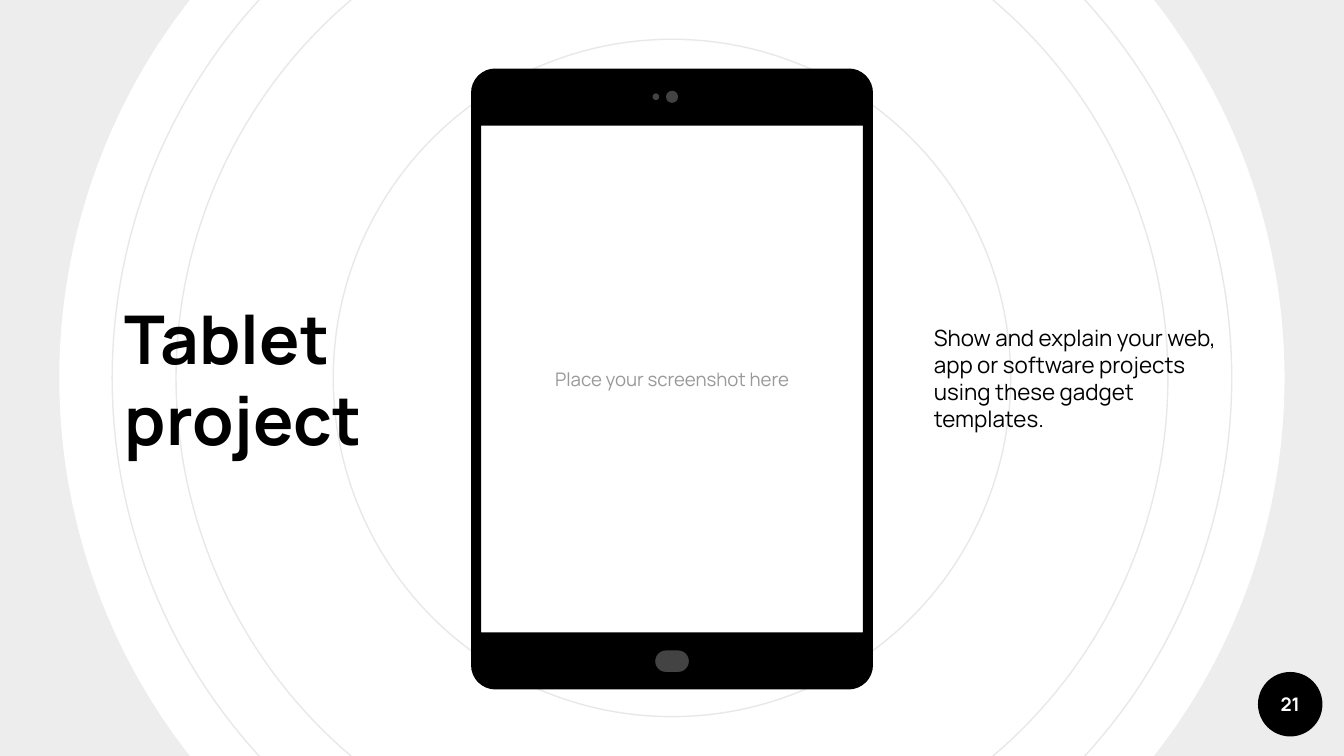
from dataclasses import dataclass
from math import cos, radians, sin

from lxml.etree import SubElement
from pptx import Presentation
from pptx.dml.color import RGBColor
from pptx.enum.shapes import MSO_SHAPE as Kind
from pptx.enum.text import MSO_ANCHOR as Anchor, PP_ALIGN as Align
from pptx.oxml.ns import qn
from pptx.util import Inches, Pt

BLACK = RGBColor(0, 0, 0)
WHITE = RGBColor(255, 255, 255)
PALE = RGBColor(0xE8, 0xE8, 0xE8)
DARK = RGBColor(0x43, 0x43, 0x43)
GREY = RGBColor(0x99, 0x99, 0x99)

WIDE = Inches(10)
HIGH = WIDE * 9 // 16
FONT = "Manrope"


@dataclass(frozen=True)
class Box:
    """Centre and size, all as shares of the slide's width."""
    x: float
    y: float
    w: float
    h: float

    def edges(self) -> tuple[int, int, int, int]:
        return (round((self.x - self.w / 2) * WIDE), round((self.y - self.h / 2) * WIDE),
                round(self.w * WIDE), round(self.h * WIDE))


@dataclass(frozen=True)
class Label:
    text: str
    box: Box
    size: int
    color: RGBColor
    bold: bool = False
    align: Align = Align.LEFT
    gap: int = 0


MID = HIGH / WIDE / 2
CORE = 0.5                      # centre of rings and tablet
RINGS = (0.833, 0.738, 0.504)   # diameters, outermost first
HALO = Box(CORE, MID, 1.154, 1.154)
BADGE = Box(0.96, 0.524, 0.048, 0.048)
BODY = Box(CORE, 0.282, 0.299, 0.462)
SCREEN = Box(CORE, 0.282, 0.284, 0.377)
CURVE = 0.018                   # corner radius of the tablet
PARTS = (
    (Kind.ROUNDED_RECTANGLE, Box(CORE, 0.492, 0.025, 0.016)),  # home button
    (Kind.OVAL, Box(0.488, 0.072, 0.005, 0.005)),              # sensor
    (Kind.OVAL, Box(CORE, 0.072, 0.009, 0.009)),               # camera
)
SIDE = 0.3                      # distance of side columns from the core
LABELS = (
    Label("Place your screenshot here", SCREEN, 10, GREY, align=Align.CENTER),
    Label("21", BADGE, 10, WHITE, True, Align.CENTER),
    Label("Tablet project", Box(CORE - SIDE - 0.001, MID, 0.232, 0.465), 36, BLACK, True, gap=6),
    Label("Show and explain your web, app or software projects using these gadget templates.",
          Box(CORE + SIDE + 0.001, MID, 0.232, 0.465), 12, BLACK, gap=6),
)


def apply(item, form: dict) -> None:
    for key, value in form.items():
        setattr(item, key, value)


def paint(shape, fill: RGBColor | None, line: RGBColor | None = None) -> None:
    shape.shadow.inherit = False
    if fill is None:
        shape.fill.background()
    else:
        shape.fill.solid()
        shape.fill.fore_color.rgb = fill
    if line is None:
        shape.line.fill.background()
    else:
        shape.line.color.rgb = line
        shape.line.width = Pt(0.75)


def draw(slide, kind: Kind, box: Box, fill: RGBColor | None, line: RGBColor | None = None):
    shape = slide.shapes.add_shape(kind, *box.edges())
    paint(shape, fill, line)
    return shape


def fade(shape, share: float) -> None:
    color = shape.fill._xPr.find(qn("a:solidFill"))[0]
    SubElement(color, qn("a:alpha")).set("val", str(round(share * 100000)))


def bend(box: Box, curve: float, steps: int = 8) -> list[tuple[int, int]]:
    """Points round a box with curved corners, clockwise from the lower right."""
    dots = []
    for turn, (right, down) in enumerate(((1, 1), (-1, 1), (-1, -1), (1, -1))):
        x = box.x + right * (box.w / 2 - curve)
        y = box.y + down * (box.h / 2 - curve)
        for step in range(steps + 1):
            arc = radians(90 * (turn + step / steps))
            dots.append((round((x + curve * cos(arc)) * WIDE), round((y + curve * sin(arc)) * WIDE)))
    return dots


def frame(slide, body: Box, screen: Box, curve: float) -> None:
    """Tablet body with the screen cut out of it."""
    first, *rest = bend(body, curve)
    pen = slide.shapes.build_freeform(*first)
    pen.add_line_segments(rest, close=True)
    x, y, w, h = screen.edges()
    pen.move_to(x, y)
    pen.add_line_segments([(x, y + h), (x + w, y + h), (x + w, y)], close=True)
    paint(pen.convert_to_shape(), BLACK)


def write(slide, label: Label) -> None:
    block = slide.shapes.add_textbox(*label.box.edges()).text_frame
    pad = dict.fromkeys(("margin_left", "margin_right", "margin_top", "margin_bottom"), Inches(0.1))
    apply(block, pad | {"word_wrap": True, "vertical_anchor": Anchor.MIDDLE})
    para = block.paragraphs[0]
    apply(para, {"alignment": label.align, "space_before": Pt(label.gap)})
    run = para.add_run()
    run.text = label.text
    apply(run.font, {"name": FONT, "size": Pt(label.size), "bold": label.bold})
    run.font.color.rgb = label.color


def main() -> None:
    deck = Presentation()
    apply(deck, {"slide_width": WIDE, "slide_height": HIGH})
    slide = deck.slides.add_slide(deck.slide_layouts[6])
    slide.background.fill.solid()
    slide.background.fill.fore_color.rgb = WHITE

    # Rings and halo behind everything
    for size in RINGS:
        draw(slide, Kind.OVAL, Box(CORE, MID, size, size), None, PALE)
    halo = draw(slide, Kind.DONUT, HALO, BLACK)
    halo.adjustments[0] = 0.105
    fade(halo, 0.07)

    # Page badge
    draw(slide, Kind.OVAL, BADGE, BLACK)

    # Tablet
    frame(slide, BODY, SCREEN, CURVE)
    for kind, box in PARTS:
        part = draw(slide, kind, box, DARK)
        if kind == Kind.ROUNDED_RECTANGLE:
            part.adjustments[0] = 0.5

    # Words
    for label in LABELS:
        write(slide, label)

    deck.save("out.pptx")


if __name__ == "__main__":
    main()
